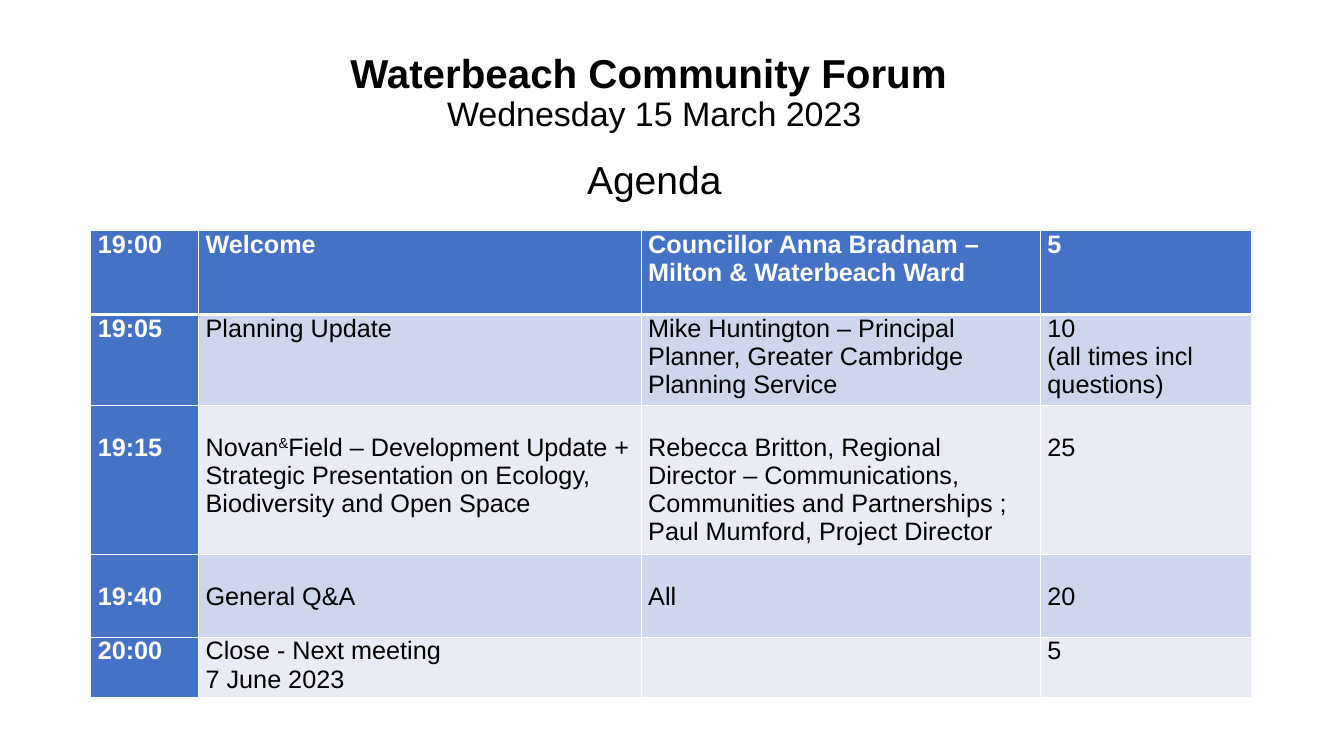
from dataclasses import dataclass

from lxml import etree
from pptx import Presentation
from pptx.dml.color import RGBColor
from pptx.enum.text import MSO_ANCHOR, PP_ALIGN
from pptx.oxml.ns import qn
from pptx.util import Inches, Pt

CENTER = PP_ALIGN.CENTER
TOP = MSO_ANCHOR.TOP
FONT = "Arial"
WHITE, BLACK, BLUE = "FFFFFF", "000000", "4472C4"
DARK_BAND, LIGHT_BAND = "CFD5EA", "E9EBF5"
SUPERSCRIPT = "&"
COLUMN_WIDTHS = (1.07, 4.39, 3.96, 2.09)
LINE_HEIGHT = 0.28


@dataclass
class Heading:
    text: str
    size: float
    bold: bool = False
    space_before: float = 0


@dataclass
class AgendaRow:
    """One agenda item; each cell holds its paragraphs, separated by newlines."""
    height: float
    cells: tuple[str, str, str, str]
    lowered: bool = False
    raised_mark: bool = False


HEADINGS = (
    Heading("Waterbeach Community Forum ", 28.8, bold=True),
    Heading("Wednesday 15 March 2023", 24.3),
    Heading("Agenda", 27.9, space_before=19.3),
)

AGENDA = (
    AgendaRow(0.83, ("19:00", "Welcome",
                     "Councillor Anna Bradnam – Milton & Waterbeach Ward", "5")),
    AgendaRow(0.82, ("19:05", "Planning Update",
                     "Mike Huntington – Principal Planner, Greater Cambridge Planning Service",
                     "10\n(all times incl questions)")),
    AgendaRow(1.39, ("19:15",
                     "Novan&Field – Development Update + Strategic Presentation on Ecology, "
                     "Biodiversity and Open Space",
                     "Rebecca Britton, Regional Director – Communications, Communities and "
                     "Partnerships ; Paul Mumford, Project Director", "25"),
              lowered=True, raised_mark=True),
    AgendaRow(0.82, ("19:40", "General Q&A", "All", "20"), lowered=True),
    AgendaRow(0.55, ("20:00", "Close - Next meeting\n7 June 2023", "", "5")),
)


def color(value: str) -> RGBColor:
    return RGBColor.from_string(value)


def add_span(para, text: str, *, size: float = 18, ink: str = BLACK,
             bold: bool = False, raised: bool = False) -> None:
    span = para.add_run()
    span.text = text
    span.font.name = FONT
    span.font.size = Pt(size)
    span.font.bold = bold
    span.font.color.rgb = color(ink)
    if raised:
        span.font._element.set("baseline", "30000")


def add_headings(page) -> None:
    box = page.shapes.add_textbox(Inches(0.56), Inches(0.4), Inches(11.86), Inches(1.89))
    frame = box.text_frame
    frame.word_wrap = True
    frame.vertical_anchor = TOP
    frame.margin_top = Inches(0.13)
    for index, heading in enumerate(HEADINGS):
        para = frame.add_paragraph() if index else frame.paragraphs[0]
        para.alignment = CENTER
        para.line_spacing = 0.9
        para.space_before = Pt(heading.space_before)
        add_span(para, heading.text, size=heading.size, bold=heading.bold)


def set_borders(cell, top: float, bottom: float) -> None:
    """Draw white borders, 1 pt at the sides and the given widths above and below."""
    properties = cell._tc.get_or_add_tcPr()
    for tag, width in (("a:lnL", 1), ("a:lnR", 1), ("a:lnT", top), ("a:lnB", bottom)):
        line = etree.SubElement(properties, qn(tag), w=str(Pt(width)))
        fill = etree.SubElement(line, qn("a:solidFill"))
        etree.SubElement(fill, qn("a:srgbClr"), val=WHITE)


def fill_cell(cell, row: AgendaRow, text: str, *, fill: str, ink: str, bold: bool) -> None:
    cell.fill.solid()
    cell.fill.fore_color.rgb = color(fill)
    cell.vertical_anchor = TOP
    cell.margin_left = cell.margin_right = Inches(0.07)
    cell.margin_top = Inches(LINE_HEIGHT if row.lowered else 0)
    cell.margin_bottom = 0
    frame = cell.text_frame
    for index, line in enumerate(text.split("\n")):
        para = frame.add_paragraph() if index else frame.paragraphs[0]
        para.font.size = Pt(18)
        parts = line.partition(SUPERSCRIPT) if row.raised_mark else (line,)
        for part in filter(None, parts):
            add_span(para, part, ink=ink, bold=bold, raised=row.raised_mark and part == SUPERSCRIPT)


def add_agenda(page) -> None:
    height = sum(row.height for row in AGENDA)
    table = page.shapes.add_table(len(AGENDA), len(COLUMN_WIDTHS), Inches(0.9), Inches(2.29),
                                  Inches(sum(COLUMN_WIDTHS)), Inches(height)).table
    table.first_col = True
    for column, width in zip(table.columns, COLUMN_WIDTHS):
        column.width = Inches(width)
    for row_index, row in enumerate(AGENDA):
        table.rows[row_index].height = Inches(row.height)
        band = DARK_BAND if row_index % 2 else LIGHT_BAND
        for column_index, text in enumerate(row.cells):
            header = row_index == 0 or column_index == 0
            cell = table.cell(row_index, column_index)
            set_borders(cell, top=3 if row_index == 1 else 1, bottom=3 if row_index == 0 else 1)
            fill_cell(cell, row, text, fill=BLUE if header else band,
                      ink=WHITE if header else BLACK, bold=header)


def main() -> None:
    deck = Presentation()
    deck.slide_width, deck.slide_height = Inches(13.33), Inches(7.5)
    page = deck.slides.add_slide(deck.slide_layouts[6])
    add_headings(page)
    add_agenda(page)
    deck.save("out.pptx")


if __name__ == "__main__":
    main()
